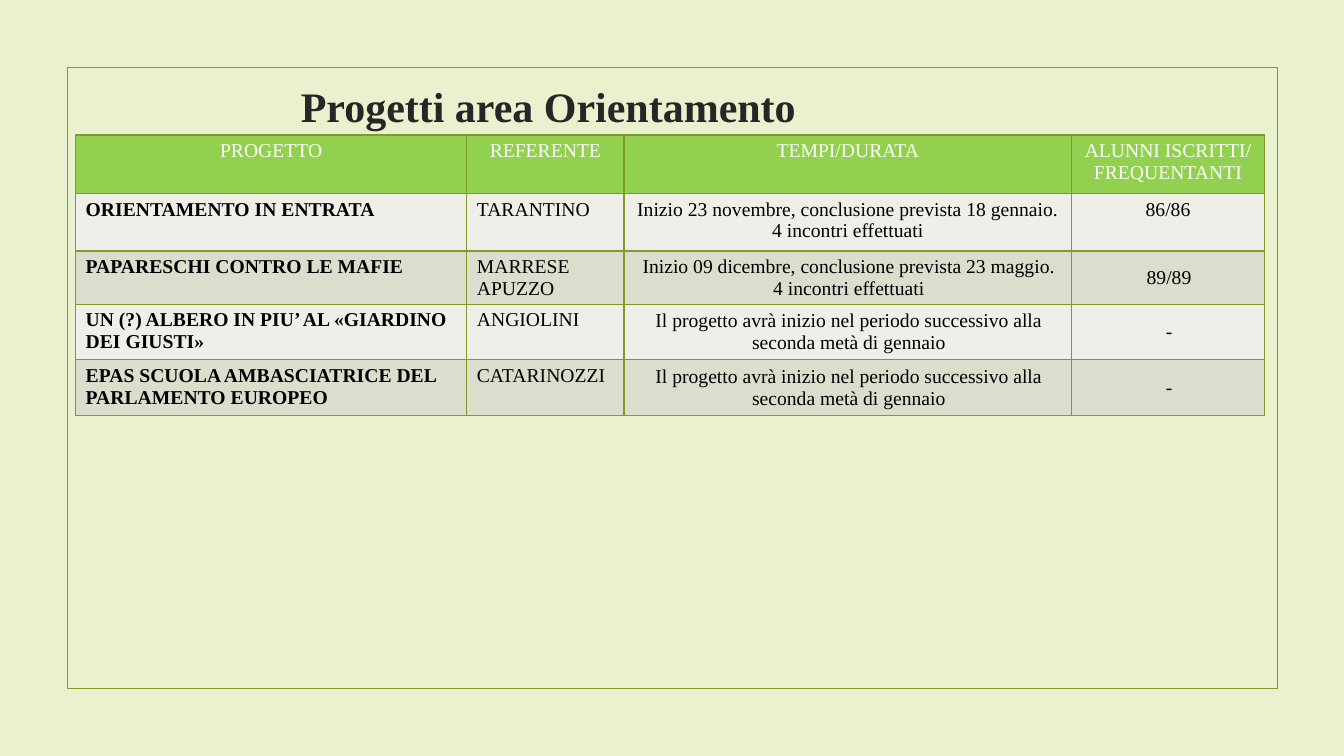
from lxml import etree
from pptx import Presentation
from pptx.dml.color import RGBColor
from pptx.enum.shapes import MSO_SHAPE
from pptx.enum.text import MSO_ANCHOR, PP_ALIGN
from pptx.oxml.ns import qn
from pptx.util import Inches, Pt

RECT = MSO_SHAPE.RECTANGLE
TOP, MIDDLE = MSO_ANCHOR.TOP, MSO_ANCHOR.MIDDLE
LEFT, CENTER = PP_ALIGN.LEFT, PP_ALIGN.CENTER
COLORS = {
    "background": "EAF1CE", "border": "83992A", "title": "262626",
    "header": "92D050", "light": "EDEFE8", "dark": "D9DECD",
    "white": "FFFFFF", "black": "000000",
}


def rgb(name):
    return RGBColor.from_string(COLORS[name])


def add_text(tf, text, size=14, color="black", bold=False, align=LEFT, anchor=TOP):
    tf.word_wrap = True
    tf.vertical_anchor = anchor
    for i, line in enumerate(text.split("\n")):
        p = tf.paragraphs[0] if i == 0 else tf.add_paragraph()
        p.alignment = align
        r = p.add_run()
        r.text = line
        r.font.name = "Times New Roman"
        r.font.size = Pt(size)
        r.font.bold = bold
        r.font.color.rgb = rgb(color)


prs = Presentation()
prs.slide_width, prs.slide_height = Inches(13.33), Inches(7.5)
s = prs.slides.add_slide(prs.slide_layouts[5])
s.background.fill.solid()
s.background.fill.fore_color.rgb = rgb("background")

frame = s.shapes.add_shape(RECT, Inches(0.67), Inches(0.67), Inches(12), Inches(6.16))
frame.shadow.inherit = False
frame.fill.background()
frame.line.color.rgb = rgb("border")
frame.line.width = Pt(1.25)

title = s.shapes.title
title.left, title.top = Inches(0.74), Inches(0.7)
title.width, title.height = Inches(9.4), Inches(0.69)
add_text(title.text_frame, "Progetti area Orientamento", size=30, color="title",
         bold=True, align=CENTER, anchor=MIDDLE)

later = "Il progetto avrà inizio nel periodo successivo alla seconda metà di gennaio"
rows = [
    ("PROGETTO", "REFERENTE", "TEMPI/DURATA", "ALUNNI ISCRITTI/\nFREQUENTANTI"),
    ("ORIENTAMENTO IN ENTRATA", "TARANTINO",
     "Inizio 23 novembre, conclusione prevista 18 gennaio.\n4 incontri effettuati", "86/86"),
    ("PAPARESCHI CONTRO LE MAFIE", "MARRESE\nAPUZZO",
     "Inizio 09 dicembre, conclusione prevista 23 maggio.\n4 incontri effettuati", "89/89"),
    ("UN (?) ALBERO IN PIU’ AL «GIARDINO DEI GIUSTI»", "ANGIOLINI", later, "-"),
    ("EPAS SCUOLA AMBASCIATRICE DEL PARLAMENTO EUROPEO", "CATARINOZZI", later, "-"),
]
col_widths = [3.88, 1.56, 4.44, 1.91]
row_heights = [0.58, 0.57, 0.53, 0.55, 0.55]

table = s.shapes.add_table(len(rows), len(col_widths), Inches(0.75), Inches(1.34),
                           Inches(sum(col_widths)), Inches(sum(row_heights))).table
for col, width in zip(table.columns, col_widths):
    col.width = Inches(width)
for row, height in zip(table.rows, row_heights):
    row.height = Inches(height)

for i, texts in enumerate(rows):
    fill = "header" if i == 0 else "light" if i % 2 else "dark"
    for j, text in enumerate(texts):
        cell = table.cell(i, j)
        tcPr = cell._tc.get_or_add_tcPr()
        for side in ("a:lnL", "a:lnR", "a:lnT", "a:lnB"):
            ln = etree.SubElement(tcPr, qn(side), w=str(Pt(1)))
            solid = etree.SubElement(ln, qn("a:solidFill"))
            etree.SubElement(solid, qn("a:srgbClr"), val=COLORS["border"])
        cell.fill.solid()
        cell.fill.fore_color.rgb = rgb(fill)
        centered = i > 1 and j > 1
        if centered:
            cell.margin_left, cell.margin_right = Inches(0.04), Inches(0.02)
        cell.vertical_anchor = MIDDLE if centered else TOP
        add_text(cell.text_frame, text, color="white" if i == 0 else "black",
                 bold=i > 0 and j == 0, align=CENTER if i == 0 or j > 1 else LEFT)

prs.save("out.pptx")
